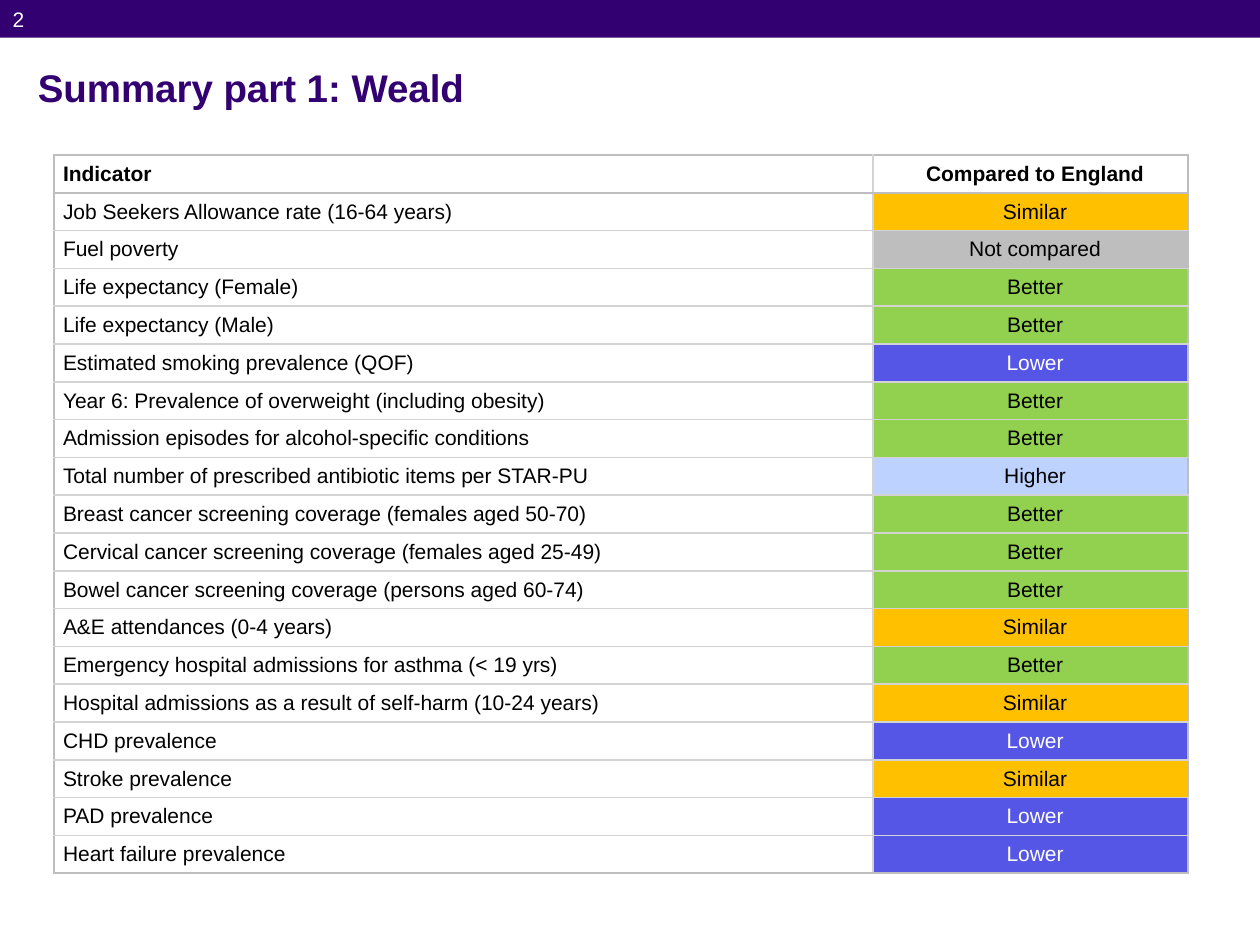
from lxml.etree import SubElement
from pptx import Presentation
from pptx.dml.color import RGBColor
from pptx.enum.shapes import MSO_SHAPE
from pptx.enum.text import MSO_ANCHOR, MSO_AUTO_SIZE, PP_ALIGN
from pptx.oxml.ns import qn
from pptx.util import Inches, Pt

PURPLE, BLACK, WHITE = "330072", "000000", "FFFFFF"
OUTER_LINE, INNER_LINE = "BEBEBE", "D3D3D3"

# Fill and text colour for each comparison result
RATINGS = {
    "Similar": ("FFC000", BLACK),
    "Not compared": ("BEBEBE", BLACK),
    "Better": ("92D050", BLACK),
    "Lower": ("5555E6", WHITE),
    "Higher": ("BED2FF", BLACK),
}
ROWS = [
    ("Indicator", "Compared to England"),
    ("Job Seekers Allowance rate (16-64 years)", "Similar"),
    ("Fuel poverty", "Not compared"),
    ("Life expectancy (Female)", "Better"),
    ("Life expectancy (Male)", "Better"),
    ("Estimated smoking prevalence (QOF)", "Lower"),
    ("Year 6: Prevalence of overweight (including obesity)", "Better"),
    ("Admission episodes for alcohol-specific conditions", "Better"),
    ("Total number of prescribed antibiotic items per STAR-PU", "Higher"),
    ("Breast cancer screening coverage (females aged 50-70)", "Better"),
    ("Cervical cancer screening coverage (females aged 25-49)", "Better"),
    ("Bowel cancer screening coverage (persons aged 60-74)", "Better"),
    ("A&E attendances (0-4 years)", "Similar"),
    ("Emergency hospital admissions for asthma (< 19 yrs)", "Better"),
    ("Hospital admissions as a result of self-harm (10-24 years)", "Similar"),
    ("CHD prevalence", "Lower"),
    ("Stroke prevalence", "Similar"),
    ("PAD prevalence", "Lower"),
    ("Heart failure prevalence", "Lower"),
]


def color(value):
    return RGBColor.from_string(value)


def add_span(para, text, size, text_color, bold=False):
    span = para.add_run()
    span.text = text
    span.font.name = "Arial"
    span.font.size = Pt(size)
    span.font.bold = bold
    span.font.color.rgb = color(text_color)


deck = Presentation()
deck.slide_width, deck.slide_height = Inches(10), Inches(7.5)
page = deck.slides.add_slide(deck.slide_layouts[1])

# Top band, placed behind the page number
band = page.shapes.add_shape(MSO_SHAPE.RECTANGLE, 0, 0, Inches(10), Inches(0.3))
band.shadow.inherit = False
band.fill.solid()
band.fill.fore_color.rgb = color(PURPLE)
band.line.fill.background()
page.shapes._spTree.insert(2, band._element)

# Title and page number
title, number = page.placeholders
title.left, title.top = Inches(0.2), Inches(0.47)
title.width, title.height = Inches(9.61), Inches(0.45)
number.left, number.top = 0, 0
number.width, number.height = Inches(0.63), Inches(0.63)
for box in (title, number):
    box.text_frame.auto_size = MSO_AUTO_SIZE.NONE
    box.text_frame.word_wrap = True

para = title.text_frame.paragraphs[0]
para.alignment = PP_ALIGN.LEFT
add_span(para, "Summary part 1: Weald", 22, PURPLE, bold=True)

para = number.text_frame.paragraphs[0]
para.space_after = Pt(4.9)
props = para._p.get_or_add_pPr()
props.set("marL", "0")
props.set("indent", "0")
SubElement(props, qn("a:buNone"))
add_span(para, "2", 12, WHITE)

# Indicator table
row_height = Inches(0.3)
frame = page.shapes.add_table(len(ROWS), 2, Inches(0.43), Inches(1.23),
                              Inches(9), row_height * len(ROWS))
table = frame.table
table.first_row = table.horz_banding = False
table.columns[0].width, table.columns[1].width = Inches(6.5), Inches(2.5)

last_row = len(ROWS) - 1
for r, texts in enumerate(ROWS):
    table.rows[r].height = row_height
    for c, text in enumerate(texts):
        cell = table.cell(r, c)
        cell.vertical_anchor = MSO_ANCHOR.MIDDLE
        cell.margin_left = cell.margin_right = 0
        cell.margin_top = cell.margin_bottom = 0

        # The frame and the header row have darker lines
        darker = {"lnL": c == 0, "lnR": c == 1,
                  "lnT": r <= 1, "lnB": r in (0, last_row)}
        cell_props = cell._tc.get_or_add_tcPr()
        for edge, is_darker in darker.items():
            line = SubElement(cell_props, qn(f"a:{edge}"), w=str(Pt(1)))
            paint = SubElement(line, qn("a:solidFill"))
            SubElement(paint, qn("a:srgbClr"),
                       val=OUTER_LINE if is_darker else INNER_LINE)

        text_color = BLACK
        if c == 1 and r > 0:
            fill_color, text_color = RATINGS[text]
            cell.fill.solid()
            cell.fill.fore_color.rgb = color(fill_color)
        else:
            cell.fill.background()

        para = cell.text_frame.paragraphs[0]
        para.alignment = PP_ALIGN.CENTER if c == 1 else PP_ALIGN.LEFT
        para.space_before = para.space_after = Pt(5)
        para._p.get_or_add_pPr().set("marL", str(Inches(0.07)))
        add_span(para, text, 12, text_color, bold=r == 0)

deck.save("out.pptx")
